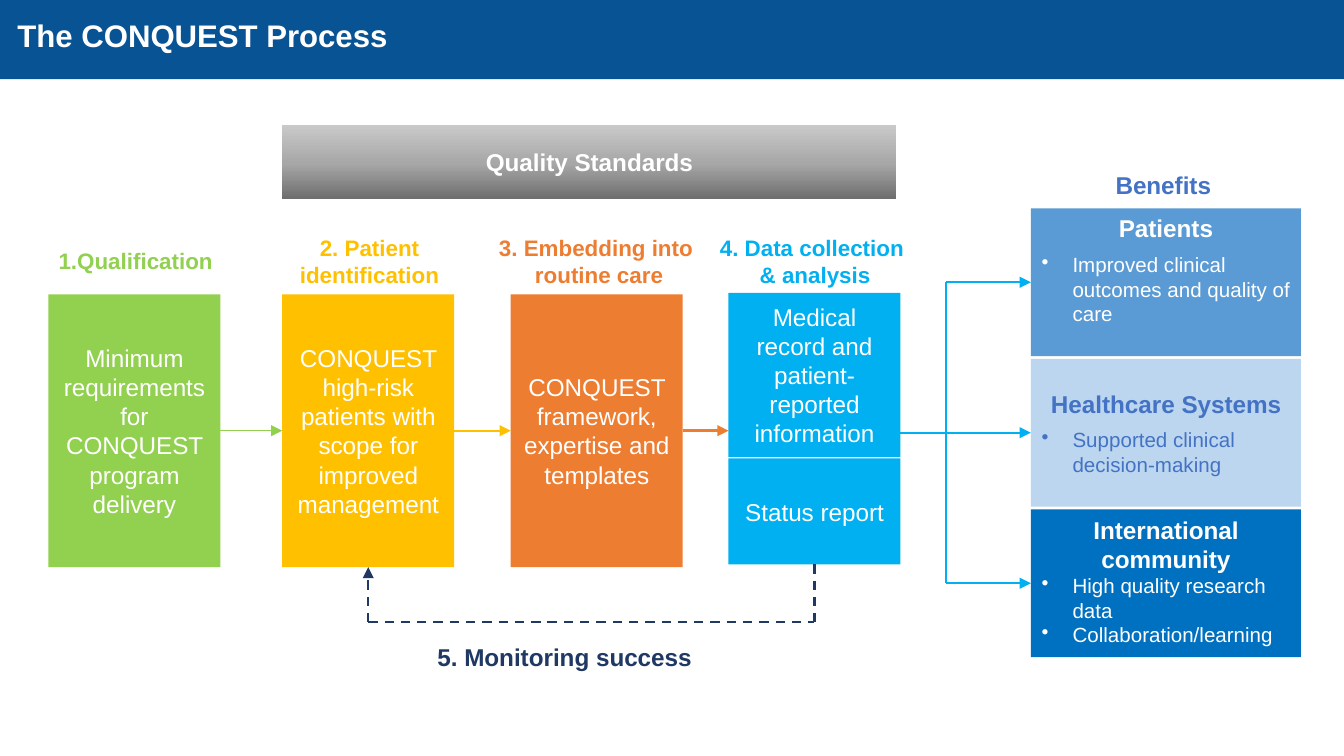
from lxml import etree
from copy import deepcopy

from pptx import Presentation
from pptx.dml.color import RGBColor
from pptx.enum.dml import MSO_LINE
from pptx.enum.shapes import MSO_CONNECTOR, MSO_SHAPE
from pptx.enum.text import MSO_ANCHOR, PP_ALIGN
from pptx.oxml.ns import qn
from pptx.util import Inches, Pt

LEFT, CENTER = PP_ALIGN.LEFT, PP_ALIGN.CENTER
TOP, MIDDLE = MSO_ANCHOR.TOP, MSO_ANCHOR.MIDDLE
STRAIGHT, RECTANGLE = MSO_CONNECTOR.STRAIGHT, MSO_SHAPE.RECTANGLE
DASH = MSO_LINE.DASH
BOTTOM_SIDE, LEFT_SIDE, RIGHT_SIDE = 2, 1, 3

WHITE = RGBColor(0xFF, 0xFF, 0xFF)
HEADER_BLUE = RGBColor(0x08, 0x53, 0x94)
GREEN = RGBColor(0x92, 0xD0, 0x50)
YELLOW = RGBColor(0xFF, 0xC0, 0x00)
ORANGE = RGBColor(0xED, 0x7D, 0x31)
CYAN = RGBColor(0x00, 0xB0, 0xF0)
NAVY = RGBColor(0x1F, 0x38, 0x64)
INDIGO = RGBColor(0x44, 0x72, 0xC4)
MID_BLUE = RGBColor(0x5B, 0x9B, 0xD5)
PALE_BLUE = RGBColor(0xBB, 0xD6, 0xEE)
DEEP_BLUE = RGBColor(0x00, 0x70, 0xC0)
GREYS = [(0, RGBColor(0x6E, 0x6E, 0x6E)), (0.48, RGBColor(0xA7, 0xA7, 0xA7)),
         (1, RGBColor(0xC9, 0xC9, 0xC9))]

STAGE_TOP, STAGE_WIDTH, STAGE_HEIGHT = 2.19, 1.28, 2.03
FLOW_Y = STAGE_TOP + STAGE_HEIGHT / 2
BENEFIT_LEFT, BENEFIT_TOP, BENEFIT_STEP = 7.67, 1.55, 1.12
TRUNK_X = 7.04
LOOP_Y = 4.63


def add_text(frame, text, size=13, color=WHITE, bold=False, align=CENTER,
             bullet=False, space_before=0, line_spacing=None):
    """Add one paragraph, using the frame's first one while it is empty."""
    paragraph = frame.add_paragraph() if frame.text else frame.paragraphs[0]
    paragraph.text = text
    paragraph.alignment = align
    if bullet:
        properties = paragraph._p.get_or_add_pPr()
        properties.set("marL", str(Inches(0.24)))
        properties.set("indent", str(Inches(-0.23)))
        bullet_color = etree.SubElement(properties, qn("a:buClr"))
        etree.SubElement(bullet_color, qn("a:srgbClr"), val=str(color))
        etree.SubElement(properties, qn("a:buChar"), char="•")
    if space_before:
        paragraph.space_before = Pt(space_before)
    if line_spacing:
        paragraph.line_spacing = line_spacing
    for run in paragraph.runs:
        run.font.name = "Arial"
        run.font.size = Pt(size)
        run.font.bold = bold
        run.font.color.rgb = color


def fill_frame(frame, text, anchor, **text_format):
    """Set up a frame and write each line of text as a paragraph."""
    frame.word_wrap = True
    frame.vertical_anchor = anchor
    frame.margin_left = frame.margin_right = Inches(0.07)
    frame.margin_top = frame.margin_bottom = Inches(0.04)
    for line in text.split("\n") if text else []:
        add_text(frame, line, **text_format)


def add_label(slide, left, top, width, height, text, anchor=TOP, **text_format):
    label = slide.shapes.add_textbox(Inches(left), Inches(top), Inches(width), Inches(height))
    fill_frame(label.text_frame, text, anchor, bold=True, **text_format)


def add_block(slide, left, top, width, height, fill, text="", anchor=MIDDLE, **text_format):
    block = slide.shapes.add_shape(
        RECTANGLE, Inches(left), Inches(top), Inches(width), Inches(height))
    block.shadow.inherit = False
    block.line.fill.background()
    block.fill.solid()
    block.fill.fore_color.rgb = fill
    fill_frame(block.text_frame, text, anchor, **text_format)
    return block


def shade(block, stops):
    """Fill a block with a gradient that runs from bottom to top."""
    block.fill.gradient()
    block.fill.gradient_angle = 90
    stop_list = block._element.spPr.find(".//" + qn("a:gsLst"))
    stop_list.append(deepcopy(stop_list[0]))
    for stop, (position, color) in zip(block.fill.gradient_stops, stops):
        stop.position = position
        stop.color.rgb = color


def add_line(slide, start, end, color, width=1.25, arrow=False, dash=None,
             source=None, target=None):
    """Draw a line; source and target are (block, side) pairs to join."""
    line = slide.shapes.add_connector(STRAIGHT, *map(Inches, start + end))
    if source:
        line.begin_connect(*source)
    if target:
        line.end_connect(*target)
    line.line.color.rgb = color
    line.line.width = Pt(width)
    if dash:
        line.line.dash_style = dash
    if arrow:
        etree.SubElement(line.line._get_or_add_ln(), qn("a:tailEnd"), type="triangle")
    etree.SubElement(line._element.spPr, qn("a:effectLst"))


def add_stages(slide):
    add_label(slide, 0.32, 1.8, 1.38, 0.28, "1.Qualification", size=12, color=GREEN)
    add_label(slide, 2.05, 1.7, 1.4, 0.48, "2. Patient identification", size=12, color=YELLOW)
    add_label(slide, 3.35, 1.7, 2.17, 0.48, "3. Embedding into\n routine care",
              size=12, color=ORANGE)
    add_label(slide, 5.26, 1.7, 1.61, 0.48, "4. Data collection \v& analysis",
              size=12, color=CYAN)

    stages = [
        (0.36, GREEN, "Minimum requirements for CONQUEST program delivery"),
        (2.1, YELLOW, "CONQUEST high-risk patients with scope for improved management"),
        (3.8, ORANGE, "CONQUEST framework, expertise and\ntemplates"),
    ]
    qualification, patients, embedding = [
        add_block(slide, left, STAGE_TOP, STAGE_WIDTH, STAGE_HEIGHT, fill, text)
        for left, fill, text in stages]
    add_block(slide, 5.42, 2.18, STAGE_WIDTH, 1.22, CYAN,
              "Medical record and patient- reported information")
    report = add_block(slide, 5.42, 3.41, STAGE_WIDTH, 0.79, CYAN, "Status report")

    add_line(slide, (1.64, FLOW_Y), (2.1, FLOW_Y), GREEN, width=0.75, arrow=True,
             source=(qualification, RIGHT_SIDE), target=(patients, LEFT_SIDE))
    add_line(slide, (3.38, FLOW_Y), (3.8, FLOW_Y), YELLOW, arrow=True,
             source=(patients, RIGHT_SIDE), target=(embedding, LEFT_SIDE))
    add_line(slide, (5.08, FLOW_Y), (5.42, FLOW_Y), ORANGE, width=1.5, arrow=True,
             source=(embedding, RIGHT_SIDE))
    return patients, report


def add_monitoring_loop(slide, patients, report):
    patients_x, report_x = 2.74, 6.06
    add_line(slide, (report_x, 4.2), (report_x, LOOP_Y), NAVY, dash=DASH,
             source=(report, BOTTOM_SIDE))
    add_line(slide, (patients_x, LOOP_Y), (report_x, LOOP_Y), NAVY, dash=DASH)
    add_line(slide, (patients_x, LOOP_Y), (patients_x, 4.22), NAVY, dash=DASH, arrow=True,
             target=(patients, BOTTOM_SIDE))
    add_label(slide, 3, 4.74, 2.4, 0.29, "5. Monitoring success", color=NAVY)


def add_benefits(slide):
    add_label(slide, 8.01, 1.23, 1.29, 0.29, "Benefits", color=INDIGO)
    benefits = [
        ("Patients", MID_BLUE, WHITE, TOP, 5,
         ["Improved clinical outcomes and quality of care"]),
        ("Healthcare Systems", PALE_BLUE, INDIGO, MIDDLE, 5,
         ["Supported clinical decision-making"]),
        ("International community", DEEP_BLUE, WHITE, TOP, 0,
         ["High quality research data", "Collaboration/learning"]),
    ]
    height = 1.1
    middles = [BENEFIT_TOP + row * BENEFIT_STEP + height / 2 for row in range(len(benefits))]
    add_line(slide, (TRUNK_X, middles[0]), (TRUNK_X, middles[-1]), CYAN)
    add_line(slide, (6.7, middles[1]), (TRUNK_X, middles[1]), CYAN)
    for middle, (heading, fill, color, anchor, gap, points) in zip(middles, benefits):
        block = add_block(slide, BENEFIT_LEFT, middle - height / 2, 2.01, height, fill,
                          heading, anchor=anchor, color=color, bold=True)
        for point in points:
            add_text(block.text_frame, point, size=11, color=color, align=LEFT,
                     bullet=True, space_before=gap)
        add_line(slide, (TRUNK_X, middle), (BENEFIT_LEFT, middle), CYAN, arrow=True,
                 target=(block, LEFT_SIDE))


def main():
    deck = Presentation()
    deck.slide_width = Inches(10)
    deck.slide_height = deck.slide_width * 9 // 16
    slide = deck.slides.add_slide(deck.slide_layouts[6])

    add_block(slide, 0, -0.01, 10, 0.6, HEADER_BLUE)
    add_label(slide, 0.06, 0.14, 8.38, 0.28, "The CONQUEST Process", anchor=MIDDLE,
              size=16.7, align=LEFT, line_spacing=0.9)
    standards = add_block(slide, 2.1, 0.93, 4.57, 0.55, GREYS[1][1],
                          "Quality Standards", bold=True)
    shade(standards, GREYS)
    patients, report = add_stages(slide)
    add_monitoring_loop(slide, patients, report)
    add_benefits(slide)
    deck.save("out.pptx")


if __name__ == "__main__":
    main()
